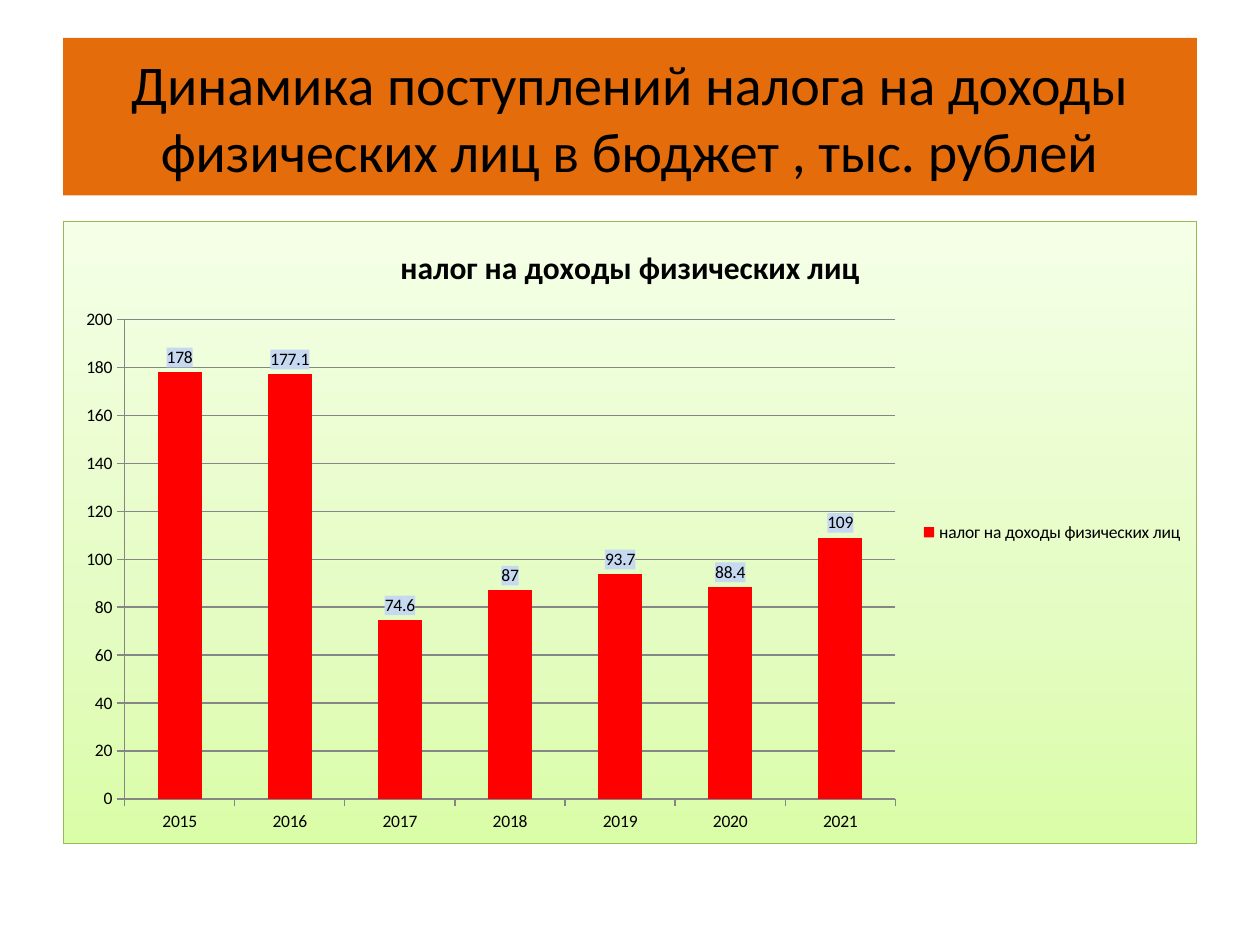
from dataclasses import dataclass

from lxml.etree import SubElement
from pptx import Presentation
from pptx.chart.data import CategoryChartData
from pptx.dml.color import RGBColor
from pptx.enum.chart import XL_CHART_TYPE as ChartType
from pptx.enum.chart import XL_LABEL_POSITION as LabelPosition
from pptx.enum.chart import XL_LEGEND_POSITION as LegendPosition
from pptx.enum.chart import XL_TICK_MARK as TickMark
from pptx.enum.text import MSO_ANCHOR, PP_ALIGN
from pptx.oxml import parse_xml
from pptx.oxml.ns import nsdecls, qn
from pptx.util import Inches, Pt


@dataclass(frozen=True)
class Theme:
    """Colours and type sizes of the slide."""
    font: str = "Calibri"
    text: str = "000000"
    banner: str = "E46C0A"
    bar: str = "FF0000"
    label: str = "C6D9F1"
    axis: str = "868686"
    border: str = "98B955"
    gradient: tuple = ((0, "DAFDA7"), (35, "E4FCC2"), (100, "F5FFE7"))
    title_size: int = 32
    chart_title_size: int = 18
    chart_size: int = 10


THEME = Theme()
TITLE = "Динамика поступлений налога на доходы физических лиц в бюджет , тыс. рублей"
SERIES = "налог на доходы физических лиц"
REVENUE = {"2015": 178, "2016": 177.1, "2017": 74.6, "2018": 87,
           "2019": 93.7, "2020": 88.4, "2021": 109}


def style_font(font, size, bold=False):
    """Apply the theme typeface and text colour."""
    font.name = THEME.font
    font.size = Pt(size)
    font.bold = bold
    font.color.rgb = RGBColor.from_string(THEME.text)


def paint(fill, color):
    """Fill with one solid colour."""
    fill.solid()
    fill.fore_color.rgb = RGBColor.from_string(color)


def style_line(line):
    """Draw a thin line in the axis colour."""
    line.color.rgb = RGBColor.from_string(THEME.axis)
    line.width = Pt(0.75)


def add_banner(page):
    """Turn the title placeholder into a coloured banner."""
    banner = page.shapes.title
    banner.left, banner.top = Inches(0.5), Inches(0.3)
    banner.width, banner.height = Inches(9), Inches(1.25)
    paint(banner.fill, THEME.banner)
    frame = banner.text_frame
    frame.text = TITLE
    frame.word_wrap = True
    frame.vertical_anchor = MSO_ANCHOR.MIDDLE
    para = frame.paragraphs[0]
    para.alignment = PP_ALIGN.CENTER
    style_font(para.runs[0].font, THEME.title_size)


def style_chart_area(chart):
    """Give the chart area its gradient and border."""
    area = parse_xml(f"<c:spPr {nsdecls('c', 'a')}/>")
    gradient = SubElement(area, qn("a:gradFill"), rotWithShape="1")
    stops = SubElement(gradient, qn("a:gsLst"))
    for position, color in THEME.gradient:
        stop = SubElement(stops, qn("a:gs"), pos=str(position * 1000))
        SubElement(stop, qn("a:srgbClr"), val=color)
    SubElement(gradient, qn("a:lin"), ang=str(270 * 60000), scaled="1")
    border = SubElement(area, qn("a:ln"), w=str(Pt(0.75)))
    solid = SubElement(border, qn("a:solidFill"))
    SubElement(solid, qn("a:srgbClr"), val=THEME.border)
    chart.element.find(qn("c:chart")).addnext(area)


def add_labels(series):
    """Show values above the bars on a tinted background."""
    labels = series.data_labels
    labels.show_value = True
    labels.position = LabelPosition.OUTSIDE_END
    style_font(labels.font, THEME.chart_size)
    background = parse_xml(
        f"<c:spPr {nsdecls('c', 'a')}><a:solidFill>"
        f'<a:srgbClr val="{THEME.label}"/></a:solidFill></c:spPr>')
    labels.font
    series.data_labels._element.find(qn("c:txPr")).addprevious(background)


def style_axes(chart):
    """Format both axes and the horizontal gridlines."""
    for axis in (chart.category_axis, chart.value_axis):
        axis.major_tick_mark = TickMark.OUTSIDE
        axis.minor_tick_mark = TickMark.NONE
        style_line(axis.format.line)
        style_font(axis.tick_labels.font, THEME.chart_size)
    values = chart.value_axis
    values.minimum_scale, values.maximum_scale, values.major_unit = 0, 200, 20
    values.has_major_gridlines = True
    style_line(values.major_gridlines.format.line)


def add_revenue_chart(page):
    """Add the column chart of yearly revenue."""
    data = CategoryChartData()
    data.categories = list(REVENUE)
    data.add_series(SERIES, list(REVENUE.values()))
    chart = page.shapes.add_chart(
        ChartType.COLUMN_CLUSTERED, Inches(0.5), Inches(1.75),
        Inches(9), Inches(4.95), data).chart
    style_font(chart.font, THEME.chart_size)
    style_chart_area(chart)
    chart.has_title = True
    frame = chart.chart_title.text_frame
    frame.text = SERIES
    style_font(frame.paragraphs[0].runs[0].font, THEME.chart_title_size, bold=True)
    chart.has_legend = True
    chart.legend.position = LegendPosition.RIGHT
    chart.legend.include_in_layout = False
    style_font(chart.legend.font, THEME.chart_size)
    style_axes(chart)
    plot = chart.plots[0]
    plot.gap_width = 150
    plot.vary_by_categories = False
    series = plot.series[0]
    paint(series.format.fill, THEME.bar)
    add_labels(series)


def main():
    """Build and save the slide."""
    deck = Presentation()
    deck.slide_width, deck.slide_height = Inches(10), Inches(7.5)
    page = deck.slides.add_slide(deck.slide_layouts[5])
    add_banner(page)
    add_revenue_chart(page)
    deck.save("out.pptx")


if __name__ == "__main__":
    main()
